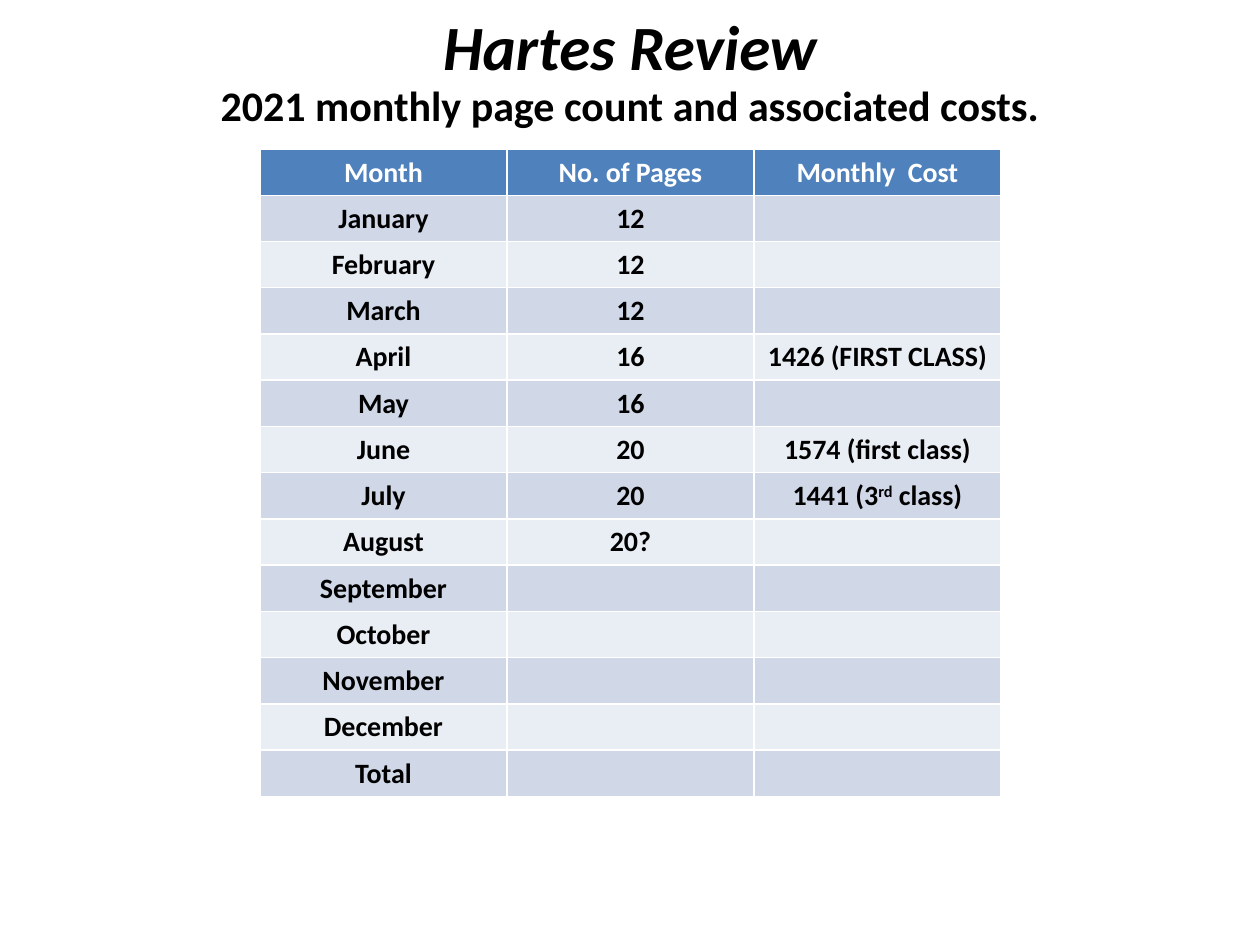
from pptx import Presentation
from pptx.dml.color import RGBColor
from pptx.enum.text import MSO_ANCHOR, PP_ALIGN
from pptx.util import Pt

PX = 914400 // 126
FONT = "Calibri"
BLACK = RGBColor(0x00, 0x00, 0x00)
WHITE = RGBColor(0xFF, 0xFF, 0xFF)
HEADER_BLUE = RGBColor(0x4F, 0x81, 0xBD)
BANDS = [RGBColor(0xD0, 0xD8, 0xE8), RGBColor(0xE9, 0xED, 0xF4)]

COLUMN_WIDTH, ROW_HEIGHT = 247, 46
HEADERS = ["Month", "No. of Pages", "Monthly  Cost"]
MONTHS = ["January", "February", "March", "April", "May", "June", "July",
          "August", "September", "October", "November", "December"]
PAGES = ["12", "12", "12", "16", "16", "20", "20", "20?"]
# A cost is a list of runs; every second run is superscript.
COSTS = {
    "April": ["1426 (FIRST CLASS)"],
    "June": ["1574 (first class)"],
    "July": ["1441 (3", "rd", " class)"],
}


def px(n):
    return n * PX


def write(p, runs, size, color, italic=False):
    """Fill a centred bold paragraph; every second run is superscript."""
    p.alignment = PP_ALIGN.CENTER
    p.font.size = Pt(size)
    for i, text in enumerate(runs):
        r = p.add_run()
        r.text = text
        r.font.name = FONT
        r.font.size = Pt(size)
        r.font.bold = True
        r.font.italic = italic
        r.font.color.rgb = color
        if i % 2:
            r.font._element.set("baseline", "30000")


def add_heading(slide, box, text, size, anchor, italic=False):
    s = slide.shapes.add_textbox(*map(px, box))
    tf = s.text_frame
    tf.word_wrap = True
    tf.vertical_anchor = anchor
    write(tf.paragraphs[0], [text], size, BLACK, italic)


def table_rows():
    """Return the rows as lists of cells, each cell a list of runs."""
    rows = [[[header] for header in HEADERS]]
    for i, month in enumerate(MONTHS):
        rows.append([[month], PAGES[i:i + 1], COSTS.get(month, [])])
    rows.append([["Total"], [], []])
    return rows


def add_cost_table(slide, left, top):
    rows = table_rows()
    width, height = COLUMN_WIDTH * len(HEADERS), ROW_HEIGHT * len(rows)
    table = slide.shapes.add_table(len(rows), len(HEADERS), px(left), px(top),
                                   px(width), px(height)).table
    for column in table.columns:
        column.width = px(COLUMN_WIDTH)
    for i, row in enumerate(rows):
        table.rows[i].height = px(ROW_HEIGHT)
        fill = BANDS[(i - 1) % 2] if i else HEADER_BLUE
        for j, runs in enumerate(row):
            cell = table.cell(i, j)
            cell.fill.solid()
            cell.fill.fore_color.rgb = fill
            write(cell.text_frame.paragraphs[0], runs, 16, BLACK if i else WHITE)


def main():
    prs = Presentation()
    prs.slide_width, prs.slide_height = px(1260), px(945)
    slide = prs.slides.add_slide(prs.slide_layouts[6])
    add_heading(slide, (0, 73, 1260, 827),
                "2021 monthly page count and associated costs.", 24, MSO_ANCHOR.TOP)
    add_heading(slide, (63, -10, 1134, 110), "Hartes Review", 36,
                MSO_ANCHOR.MIDDLE, italic=True)
    add_cost_table(slide, 260, 149)
    prs.save("out.pptx")


if __name__ == "__main__":
    main()
